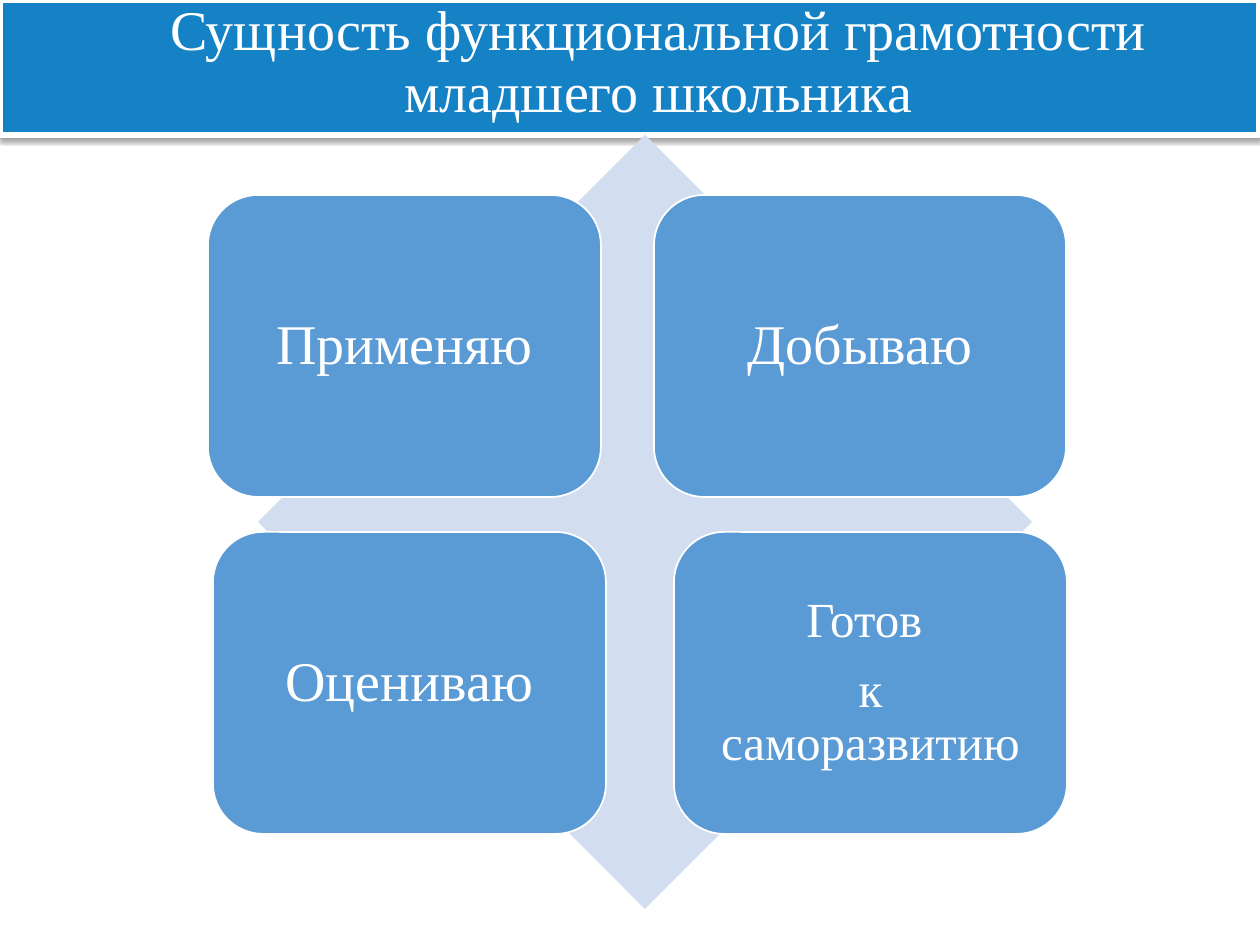
from lxml import etree
from pptx import Presentation
from pptx.dml.color import RGBColor
from pptx.enum.shapes import MSO_SHAPE
from pptx.enum.text import MSO_ANCHOR, PP_ALIGN
from pptx.oxml.ns import qn
from pptx.util import Emu, Pt

RECTANGLE = MSO_SHAPE.RECTANGLE
DIAMOND = MSO_SHAPE.DIAMOND
ROUNDED = MSO_SHAPE.ROUNDED_RECTANGLE
CENTER = PP_ALIGN.CENTER
TOP = MSO_ANCHOR.TOP
MIDDLE = MSO_ANCHOR.MIDDLE

EMU_PER_PX = 914400 / 126
TITLE_ONLY = 5
FONT = "Times New Roman"
WHITE = "FFFFFF"
CARD_BLUE = "5B9BD5"
CARD_HEIGHT = 302
TOP_ROW, BOTTOM_ROW = 195, 532

CARDS = [
    (208, TOP_ROW, 393, ["Применяю"], 32),
    (654, TOP_ROW, 412, ["Добываю"], 32),
    (213, BOTTOM_ROW, 393, ["Оцениваю"], 32),
    (674, BOTTOM_ROW, 393, ["Готов ", "к саморазвитию"], 28),
]


def px(value):
    return Emu(round(value * EMU_PER_PX))


def color(value):
    return RGBColor.from_string(value)


def add_block(slide, kind, left, top, width, height, fill, line=None, line_width=1):
    shape = slide.shapes.add_shape(kind, px(left), px(top), px(width), px(height))
    shape.shadow.inherit = False
    shape.fill.solid()
    shape.fill.fore_color.rgb = color(fill)
    if line:
        shape.line.color.rgb = color(line)
        shape.line.width = Pt(line_width)
    else:
        shape.line.fill.background()
    return shape


def write_text(shape, lines, size, margins, anchor=MIDDLE, spacing=0.9, after=0):
    frame = shape.text_frame
    frame.word_wrap = True
    frame.vertical_anchor = anchor
    frame.margin_left, frame.margin_top, frame.margin_right, frame.margin_bottom = map(px, margins)
    for index, line in enumerate(lines):
        paragraph = frame.add_paragraph() if index else frame.paragraphs[0]
        paragraph.text = line
        paragraph.alignment = CENTER
        paragraph.line_spacing = spacing
        paragraph.space_before = Pt(0)
        paragraph.space_after = Pt(after)
        for run in paragraph.runs:
            run.font.name = FONT
            run.font.size = Pt(size)
            run.font.color.rgb = color(WHITE)


def add_shadow(shape, blur, distance, opacity):
    effects = shape.element.spPr.find(qn("a:effectLst"))
    shadow = etree.SubElement(effects, qn("a:outerShdw"), blurRad=str(Pt(blur)),
                              dist=str(Pt(distance)), dir="5400000", rotWithShape="0")
    tint = etree.SubElement(shadow, qn("a:srgbClr"), val="000000")
    etree.SubElement(tint, qn("a:alpha"), val=str(opacity * 1000))


def add_banner(slide):
    banner = add_block(slide, RECTANGLE, 0, 0, 1259, 135, "1682C6", WHITE, 3)
    add_shadow(banner, blur=3, distance=1.6, opacity=38)


def add_card(slide, left, top, width, lines, size):
    card = add_block(slide, ROUNDED, left, top, width, CARD_HEIGHT, CARD_BLUE, WHITE)
    write_text(card, lines, size, (16, 16, 16, 16), after=round(size * 0.35, 1))


def set_title(slide, text):
    title = slide.shapes.title
    title.left, title.top, title.width, title.height = map(px, (115, -3, 1101, 149))
    write_text(title, [text], 32, (13, 4, 13, 6), anchor=TOP, spacing=0.92)
    title.element.getparent().append(title.element)


def main():
    presentation = Presentation()
    presentation.slide_width = px(1260)
    presentation.slide_height = px(945)
    slide = presentation.slides.add_slide(presentation.slide_layouts[TITLE_ONLY])
    add_banner(slide)
    add_block(slide, DIAMOND, 258, 135, 774, 774, "D2DEEF")
    for card in CARDS:
        add_card(slide, *card)
    set_title(slide, "Сущность функциональной грамотности \vмладшего школьника ")
    presentation.save("out.pptx")


if __name__ == "__main__":
    main()
